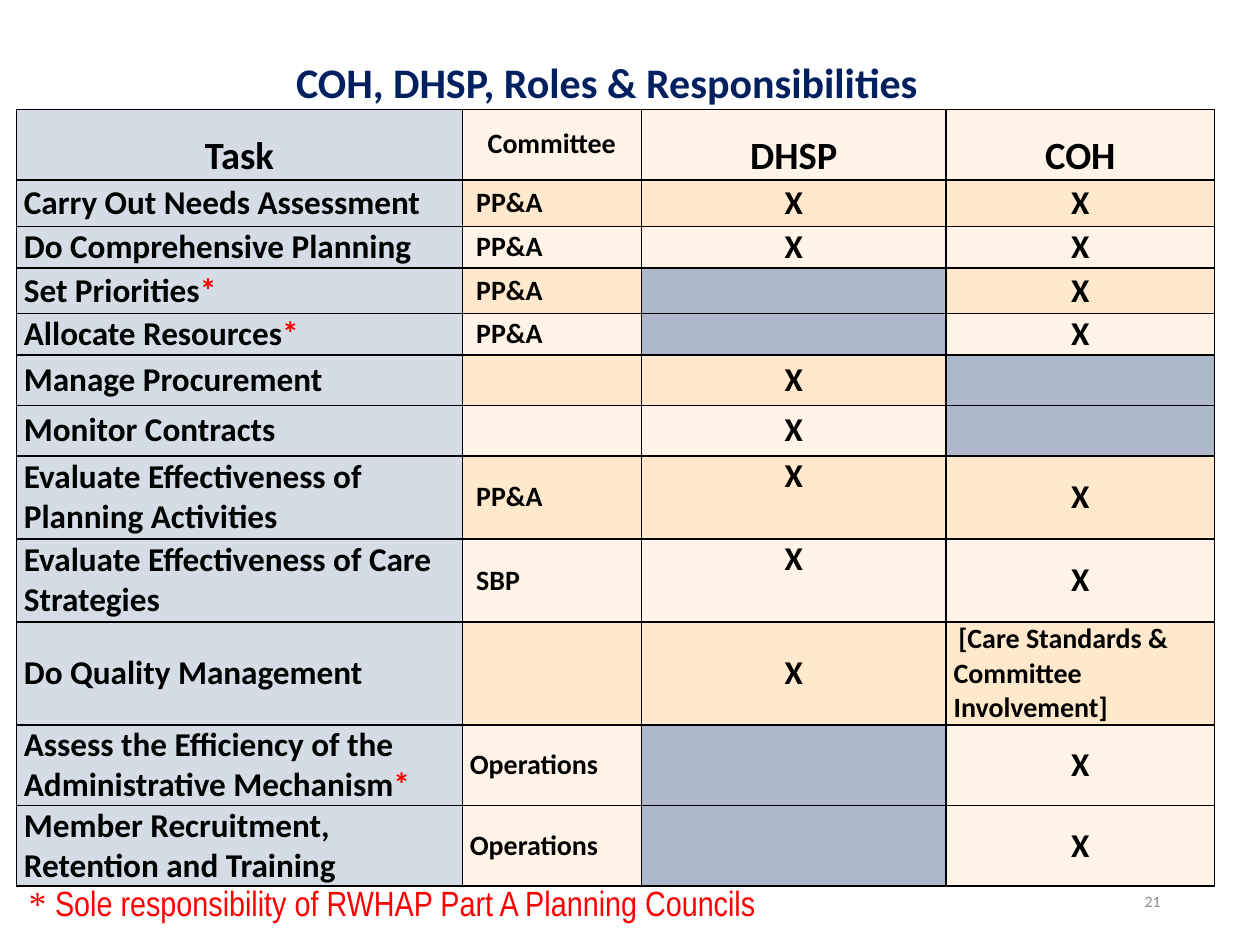
"""Build the slide that sets out COH and DHSP roles and responsibilities."""
import lxml.etree
import pptx
import pptx.dml.color
import pptx.enum.text
import pptx.oxml.ns
import pptx.util

Inches = pptx.util.Inches
RGB = pptx.dml.color.RGBColor
ALIGN = pptx.enum.text.PP_ALIGN
ANCHOR = pptx.enum.text.MSO_ANCHOR

BLACK = RGB(0x00, 0x00, 0x00)
RED = RGB(0xFF, 0x00, 0x00)
NAVY = RGB(0x00, 0x20, 0x60)
GREY = RGB(0x89, 0x89, 0x89)
TASK_FILL = RGB(0xD6, 0xDC, 0xE5)
NO_ROLE_FILL = RGB(0xAD, 0xB9, 0xCA)
LIGHT_BAND = RGB(0xFF, 0xF4, 0xE7)
DARK_BAND = RGB(0xFF, 0xE8, 0xCB)

TITLE = "COH, DHSP, Roles & Responsibilities "
FOOTNOTE = "Sole responsibility of RWHAP Part A Planning Councils"
PAGE = "21"
NO_ROLE = None
INVOLVEMENT = "[Care Standards & Committee Involvement]"
HEADINGS = ["Task", "Committee", "DHSP", "COH"]
DUTIES = [
    ("Carry Out Needs Assessment", " PP&A", "X", "X"),
    ("Do Comprehensive Planning", " PP&A", "X", "X"),
    ("Set Priorities*", " PP&A", NO_ROLE, "X"),
    ("Allocate Resources*", " PP&A", NO_ROLE, "X"),
    ("Manage Procurement", "", "X", NO_ROLE),
    ("Monitor Contracts", "", "X", NO_ROLE),
    ("Evaluate Effectiveness of Planning Activities", " PP&A", "X", "X"),
    ("Evaluate Effectiveness of Care Strategies", " SBP", "X", "X"),
    ("Do Quality Management", "", "X", INVOLVEMENT),
    ("Assess the Efficiency of the Administrative Mechanism*", "Operations", NO_ROLE, "X"),
    ("Member Recruitment, Retention and Training", "Operations", NO_ROLE, "X"),
]
COLUMN_WIDTHS = [3.54, 1.42, 2.42, 2.13]
ROW_HEIGHTS = [0.37, 0.37, 0.33, 0.36, 0.33, 0.4, 0.4, 0.66, 0.66, 0.55, 0.63, 0.63]
TOP_MARK_ROWS = (7, 8)
LAST_DARK_ROW = 9
LEFT = 0.13


def write(frame, *pieces, size=19, font="Calibri", color=BLACK, bold=True,
          align=ALIGN.LEFT, spacing=None, anchor=None, wrap=True):
    """Fill a text frame with pieces, each a text or a (text, overrides) pair."""
    frame.word_wrap = wrap
    if anchor is not None:
        frame.vertical_anchor = anchor
    paragraph = frame.paragraphs[0]
    paragraph.alignment = align
    if spacing:
        paragraph.line_spacing = spacing
    for piece in pieces:
        text, changes = (piece, {}) if isinstance(piece, str) else piece
        run = paragraph.add_run()
        run.text = text
        run.font.size = pptx.util.Pt(changes.get("size", size))
        run.font.name = changes.get("font", font)
        run.font.color.rgb = changes.get("color", color)
        run.font.bold = bold


def add_borders(cell):
    """Draw a one-point black line on each side of a cell."""
    properties = cell._tc.get_or_add_tcPr()
    for side in ("a:lnL", "a:lnR", "a:lnT", "a:lnB"):
        line = lxml.etree.SubElement(properties, pptx.oxml.ns.qn(side), w="12700")
        fill = lxml.etree.SubElement(line, pptx.oxml.ns.qn("a:solidFill"))
        lxml.etree.SubElement(fill, pptx.oxml.ns.qn("a:srgbClr"), val=str(BLACK))


def cell_fill(row, column, text):
    """Choose the fill from the column, the role and the row's band."""
    if column == 0:
        return TASK_FILL
    if text is NO_ROLE:
        return NO_ROLE_FILL
    return DARK_BAND if row % 2 and row <= LAST_DARK_ROW else LIGHT_BAND


def fill_cell(cell, row, column, text):
    """Format one table cell and write its text."""
    cell.margin_left = cell.margin_right = Inches(0.06)
    cell.margin_top = cell.margin_bottom = 0
    add_borders(cell)
    cell.fill.solid()
    cell.fill.fore_color.rgb = cell_fill(row, column, text)
    if not text:
        return
    frame = cell.text_frame
    size = 16 if column == 1 or text == INVOLVEMENT else 19
    if row == 0:
        write(frame, text, size=16 if column == 1 else 22,
              align=ALIGN.CENTER, spacing=1.5)
        return
    top_mark = column == 2 and row in TOP_MARK_ROWS
    cell.vertical_anchor = ANCHOR.TOP if top_mark else ANCHOR.MIDDLE
    pieces = [text.rstrip("*")]
    if text.endswith("*"):
        pieces.append(("*", {"color": RED}))
    if text == INVOLVEMENT:
        pieces.insert(0, (" ", {"size": 12, "color": RED}))
    write(frame, *pieces, size=size, align=ALIGN.CENTER if text == "X" else ALIGN.LEFT)


def main():
    deck = pptx.Presentation()
    deck.slide_width, deck.slide_height = Inches(10), Inches(7.5)
    slide = deck.slides.add_slide(deck.slide_layouts[5])

    roles = slide.shapes.add_table(
        len(ROW_HEIGHTS), len(COLUMN_WIDTHS), Inches(LEFT), Inches(0.87),
        Inches(sum(COLUMN_WIDTHS)), Inches(sum(ROW_HEIGHTS))).table
    for column, width in zip(roles.columns, COLUMN_WIDTHS):
        column.width = Inches(width)
    for row, height in zip(roles.rows, ROW_HEIGHTS):
        row.height = Inches(height)
    for row, texts in enumerate([HEADINGS, *DUTIES]):
        for column, text in enumerate(texts):
            fill_cell(roles.cell(row, column), row, column, text)

    footnote = slide.shapes.add_textbox(Inches(LEFT), Inches(6.95), Inches(6.02), Inches(0.44))
    write(footnote.text_frame, ("* ", {"font": "Times New Roman"}), FOOTNOTE,
          size=20, font="Arial Narrow", color=RED, bold=False, wrap=False)

    title = slide.shapes.title
    title.left, title.top = Inches(LEFT), Inches(0.4)
    title.width, title.height = Inches(9.45), Inches(0.43)
    write(title.text_frame, TITLE, size=24, color=NAVY, align=ALIGN.CENTER,
          spacing=1.15, anchor=ANCHOR.MIDDLE)

    page = slide.shapes.add_textbox(Inches(7.06), Inches(6.95), Inches(2.25), Inches(0.4))
    write(page.text_frame, PAGE, size=9, color=GREY, bold=False,
          align=ALIGN.RIGHT, anchor=ANCHOR.MIDDLE)

    deck.save("out.pptx")


if __name__ == "__main__":
    main()
